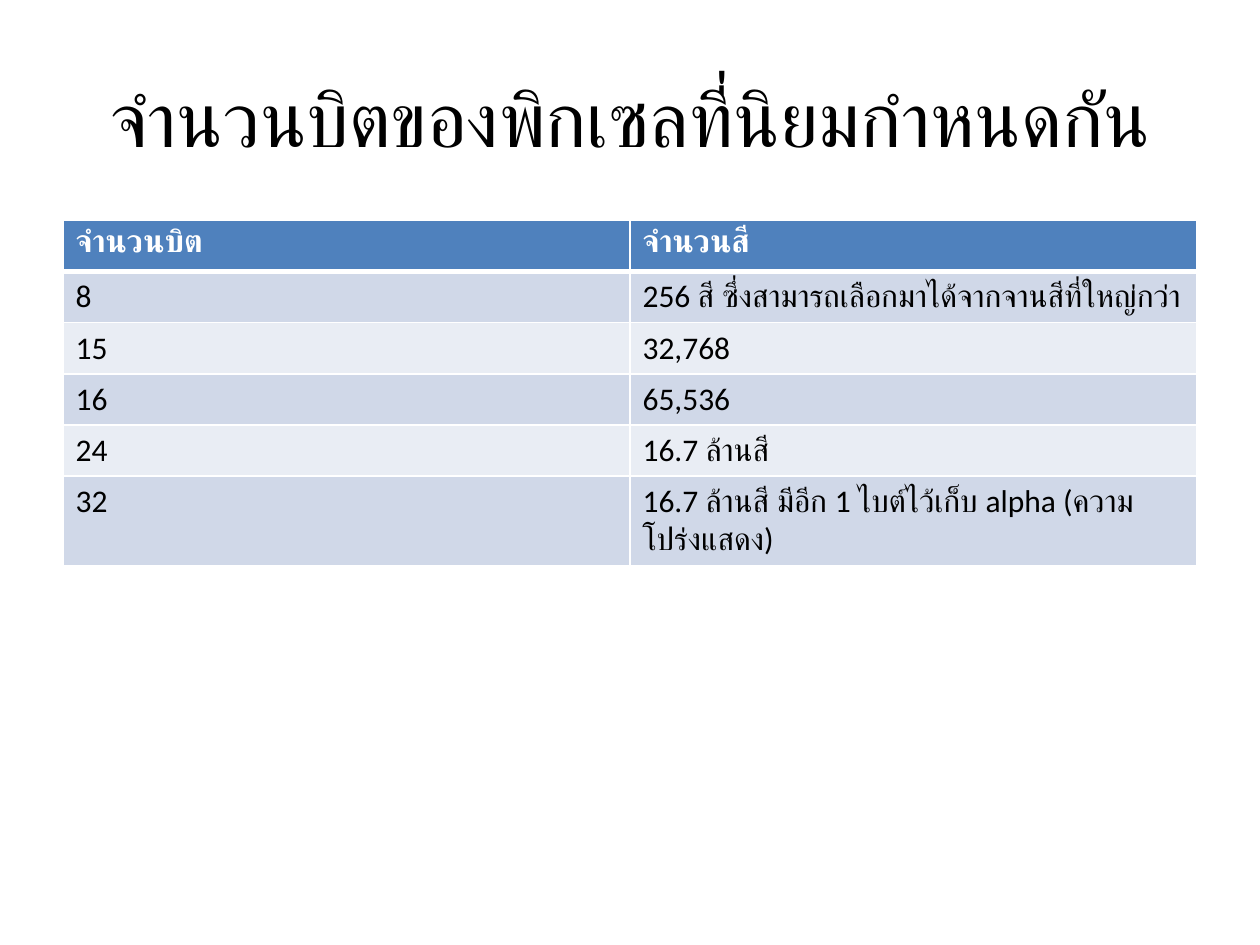
from lxml import etree
from pptx import Presentation
from pptx.dml.color import RGBColor
from pptx.enum.text import MSO_ANCHOR, PP_ALIGN
from pptx.oxml.ns import qn
from pptx.util import Pt

CENTER = PP_ALIGN.CENTER
MIDDLE = MSO_ANCHOR.MIDDLE
TITLE_ONLY = 5

COLORS = {
    "text": "000000",
    "header": "4F81BD",
    "header_text": "FFFFFF",
    "odd_row": "D0D8E8",
    "even_row": "E9EDF4",
    "border": "FFFFFF",
}

BIT_DEPTHS = [
    ("จำนวนบิต", "จำนวนสี"),
    ("8", "256 สี ซึ่งสามารถเลือกมาได้จากจานสีที่ใหญ่กว่า"),
    ("15", "32,768"),
    ("16", "65,536"),
    ("24", "16.7 ล้านสี"),
    ("32", "16.7 ล้านสี มีอีก 1 ไบต์ไว้เก็บ alpha (ความโปร่งแสดง)"),
]


class SlideBuilder:
    def __init__(self, slide, font="Calibri"):
        self.slide = slide
        self.font = font

    def styled_text(self, frame, text, size, color, bold=False):
        frame.text = text
        for para in frame.paragraphs:
            for span in para.runs:
                span.font.name = self.font
                span.font.size = Pt(size)
                span.font.bold = bold
                span.font.color.rgb = RGBColor.from_string(COLORS[color])

    def title(self, text, left, top, width, height):
        box = self.slide.shapes.title
        box.left, box.top = Pt(left), Pt(top)
        box.width, box.height = Pt(width), Pt(height)
        self.styled_text(box.text_frame, text, 44, "text")
        box.text_frame.vertical_anchor = MIDDLE
        box.text_frame.paragraphs[0].alignment = CENTER

    def borders(self, cell, widths):
        properties = cell._tc.get_or_add_tcPr()
        # Border lines must come before the cell fill
        for index, (side, width) in enumerate(widths.items()):
            line = etree.Element(qn(f"a:ln{side}"), w=str(Pt(width)))
            fill = etree.SubElement(line, qn("a:solidFill"))
            etree.SubElement(fill, qn("a:srgbClr"), val=COLORS["border"])
            properties.insert(index, line)

    def table(self, rows, left, top, width, row_height):
        table = self.slide.shapes.add_table(
            len(rows), len(rows[0]), Pt(left), Pt(top),
            Pt(width), Pt(row_height * len(rows))).table
        for r, values in enumerate(rows):
            header = r == 0
            fill = "header" if header else "odd_row" if r % 2 else "even_row"
            color = "header_text" if header else "text"
            widths = {"L": 1, "R": 1, "T": 3 if r == 1 else 1,
                      "B": 3 if header else 1}
            for c, value in enumerate(values):
                cell = table.cell(r, c)
                self.styled_text(cell.text_frame, value, 18, color, header)
                cell.fill.solid()
                cell.fill.fore_color.rgb = RGBColor.from_string(COLORS[fill])
                self.borders(cell, widths)


def main():
    deck = Presentation()
    deck.slide_width, deck.slide_height = Pt(720), Pt(540)
    page = SlideBuilder(deck.slides.add_slide(deck.slide_layouts[TITLE_ONLY]))

    # Heading
    page.title("จำนวนบิตของพิกเซลที่นิยมกำหนดกัน", 36, 21.6, 648, 90)

    # Colours available at each bit depth
    page.table(BIT_DEPTHS, 36, 126, 648, 29.2)

    deck.save("out.pptx")


if __name__ == "__main__":
    main()
